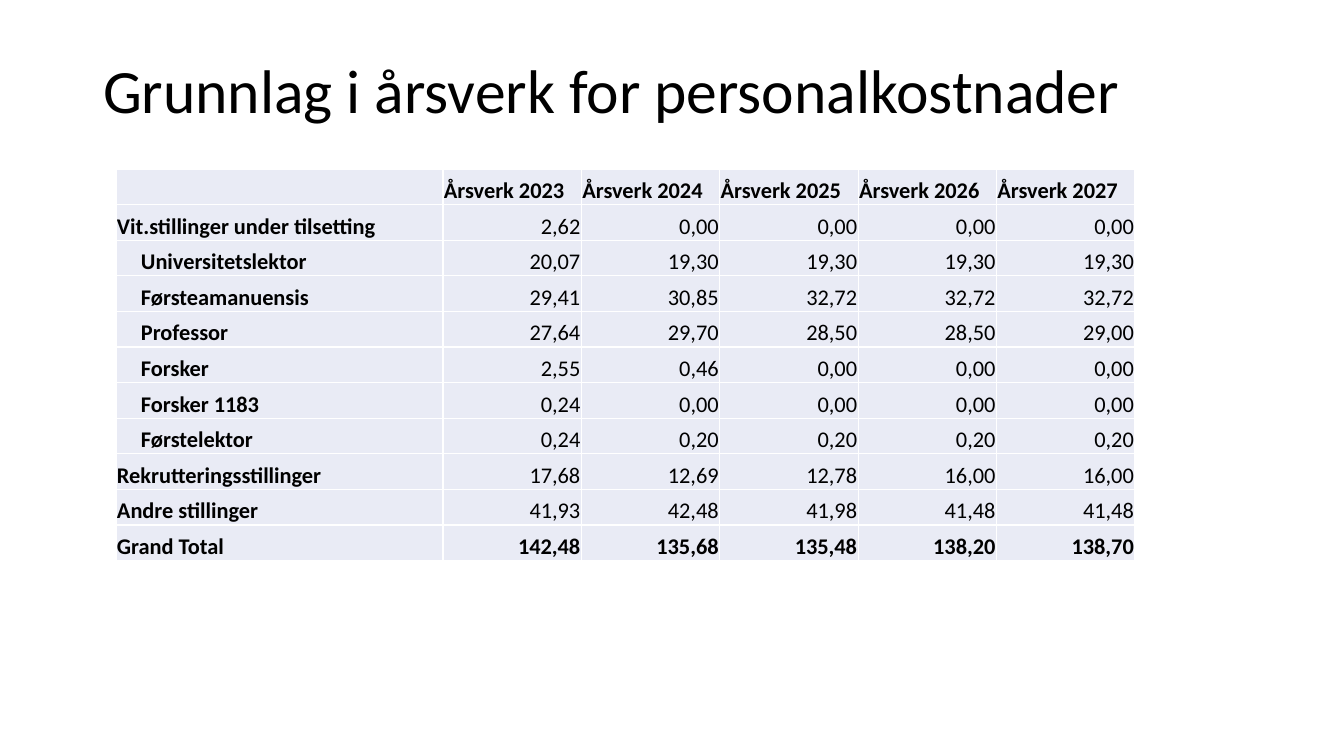
from lxml import etree
from pptx import Presentation
from pptx import util as u
from pptx.dml.color import RGBColor
from pptx.enum import text
from pptx.oxml import ns

SCALE = 914400 / 100.8
YEARS = range(2023, 2028)
INDENT = 25
ROWS = [
    ("Vit.stillinger under tilsetting", 1, "2,62 0,00 0,00 0,00 0,00"),
    ("Universitetslektor", INDENT, "20,07 19,30 19,30 19,30 19,30"),
    ("Førsteamanuensis", INDENT, "29,41 30,85 32,72 32,72 32,72"),
    ("Professor", INDENT, "27,64 29,70 28,50 28,50 29,00"),
    ("Forsker", INDENT, "2,55 0,46 0,00 0,00 0,00"),
    ("Forsker 1183", INDENT, "0,24 0,00 0,00 0,00 0,00"),
    ("Førstelektor", INDENT, "0,24 0,20 0,20 0,20 0,20"),
    ("Rekrutteringsstillinger", 1, "17,68 12,69 12,78 16,00 16,00"),
    ("Andre stillinger", 1, "41,93 42,48 41,98 41,48 41,48"),
    ("Grand Total", 1, "142,48 135,68 135,48 138,20 138,70"),
]


def px(size):
    """Turn pixels into EMU."""
    return u.Emu(round(size * SCALE))


def tint(code):
    """Turn a hex string into a colour."""
    return RGBColor.from_string(code)


def add_run(para, words, size, bold=False):
    """Add one black run to a paragraph."""
    run = para.add_run()
    run.text = words
    font = run.font
    font.name, font.size, font.bold = "Calibri", u.Pt(size), bold
    font.color.rgb = tint("000000")


def add_title(slide, words):
    """Place and fill the title."""
    title = slide.shapes.title
    title.left, title.top = px(93), px(40)
    title.width, title.height = px(1159), px(108)
    frame = title.text_frame
    frame.vertical_anchor = text.MSO_ANCHOR.MIDDLE
    para = frame.paragraphs[0]
    para.alignment = text.PP_ALIGN.LEFT
    para.line_spacing = 0.9
    add_run(para, words, 44)


def add_edges(cell, code):
    """Draw a thin line on each side of a cell."""
    props = cell._tc.get_or_add_tcPr()
    for side in "LRTB":
        line = etree.SubElement(props, ns.qn(f"a:ln{side}"), w=str(u.Pt(1)))
        fill = etree.SubElement(line, ns.qn("a:solidFill"))
        etree.SubElement(fill, ns.qn("a:srgbClr"), val=code)


def fill_cell(cell, words, bold, align, left=1):
    """Style a cell and write its words."""
    add_edges(cell, "FFFFFF")
    cell.fill.solid()
    cell.fill.fore_color.rgb = tint("E9EBF5")
    cell.vertical_anchor = text.MSO_ANCHOR.BOTTOM
    cell.margin_left = px(left)
    cell.margin_top = cell.margin_right = px(1)
    cell.margin_bottom = 0
    para = cell.text_frame.paragraphs[0]
    para.alignment = align
    if words:
        add_run(para, words, 16, bold)


def add_grid(slide):
    """Build the table of man-years."""
    count = len(ROWS) + 1
    wide, rest, high = px(327), px(692), px(392)
    frame = slide.shapes.add_table(
        count, len(YEARS) + 1, px(116), px(169), wide + rest, high)
    table = frame.table
    table.first_row = table.horz_banding = False
    for col in table.columns:
        col.width = rest // len(YEARS)
    table.columns[0].width = wide
    for row in table.rows:
        row.height = high // count

    near, far = text.PP_ALIGN.LEFT, text.PP_ALIGN.RIGHT
    heads = [""] + [f"Årsverk {year}" for year in YEARS]
    for c, head in enumerate(heads):
        fill_cell(table.cell(0, c), head, True, near)
    for r, (label, left, values) in enumerate(ROWS, 1):
        fill_cell(table.cell(r, 0), label, True, near, left)
        for c, value in enumerate(values.split(), 1):
            fill_cell(table.cell(r, c), value, r == len(ROWS), far)


def main():
    """Build and save the slide."""
    deck = Presentation()
    deck.slide_width, deck.slide_height = px(1344), px(756)
    slide = deck.slides.add_slide(deck.slide_layouts[5])
    add_title(slide, "Grunnlag i årsverk for personalkostnader")
    add_grid(slide)
    deck.save("out.pptx")


if __name__ == "__main__":
    main()
